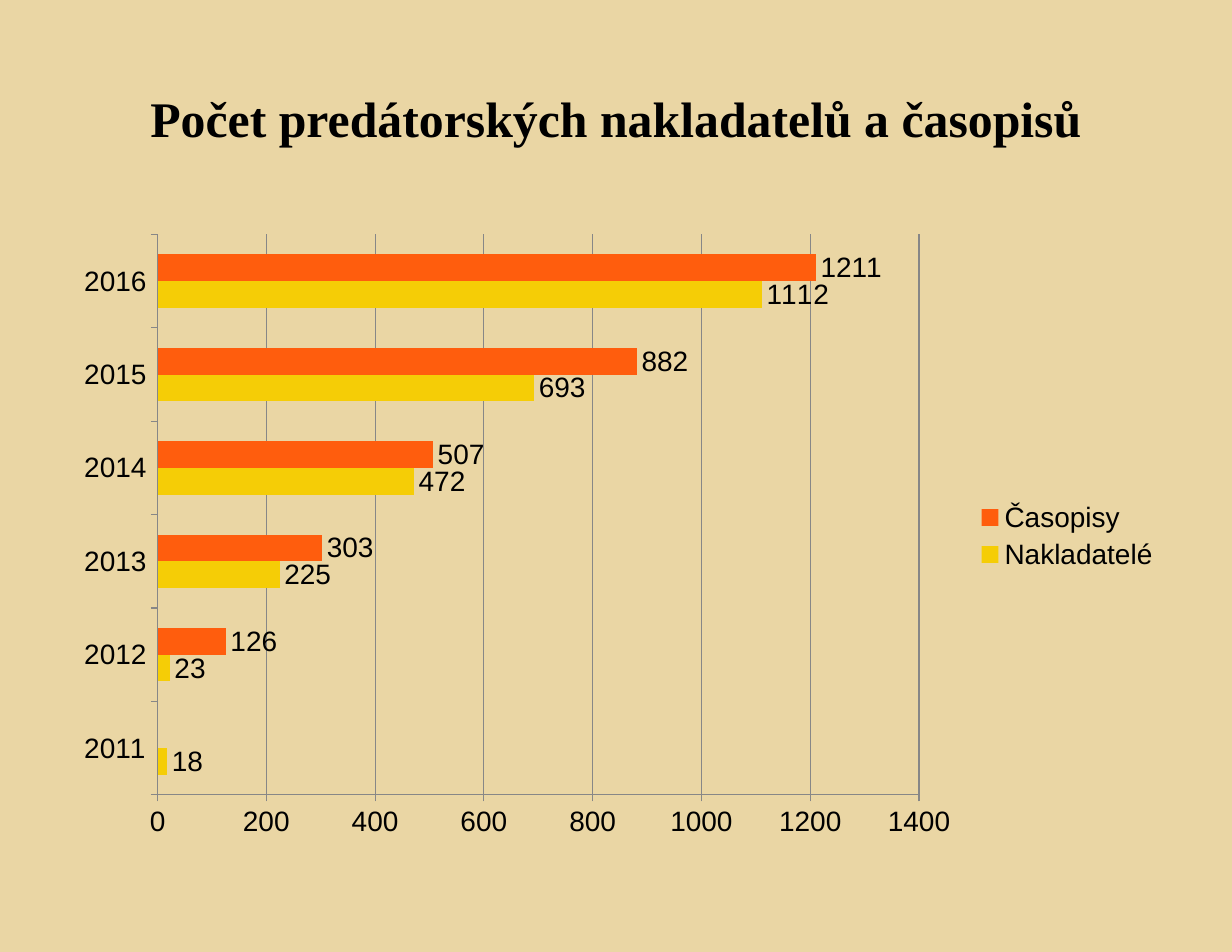
from pptx import Presentation, util as u
from pptx.chart import data
from pptx.dml import color
from pptx.enum import chart as kinds, text

PX = u.Inches(1) // 112
COLORS = {
    "background": "EAD6A4",
    "text": "000000",
    "grid": "878787",
    "publishers": "F5CD06",
    "journals": "FF5D0D",
}
YEARS = ["2011", "2012", "2013", "2014", "2015", "2016"]
SERIES = [
    ("Nakladatelé", "publishers", [18, 23, 225, 472, 693, 1112]),
    ("Časopisy", "journals", [None, 126, 303, 507, 882, 1211]),
]


def rgb(name):
    return color.RGBColor.from_string(COLORS[name])


def style_font(font, name, size, bold=False):
    font.name = name
    font.size = u.Pt(size)
    font.bold = bold
    font.color.rgb = rgb("text")


def style_line(line):
    line.color.rgb = rgb("grid")
    line.width = u.Pt(0.75)


def add_title(slide, box):
    title = slide.shapes.title
    title.left, title.top, title.width, title.height = [side * PX for side in box]
    frame = title.text_frame
    frame.text = "Počet predátorských nakladatelů a časopisů"
    frame.word_wrap = True
    frame.vertical_anchor = text.MSO_ANCHOR.MIDDLE
    para = frame.paragraphs[0]
    para.alignment = text.PP_ALIGN.CENTER
    style_font(para.font, "Times New Roman", 32, True)


def add_bars(slide, box):
    chart_data = data.CategoryChartData()
    chart_data.categories = YEARS
    for name, _, values in SERIES:
        chart_data.add_series(name, values)
    chart = slide.shapes.add_chart(
        kinds.XL_CHART_TYPE.BAR_CLUSTERED, *[side * PX for side in box], chart_data
    ).chart
    chart.has_title = False
    style_font(chart.font, "Arial", 18)
    chart.has_legend = True
    chart.legend.position = kinds.XL_LEGEND_POSITION.RIGHT
    chart.legend.include_in_layout = False

    for axis in (chart.category_axis, chart.value_axis):
        axis.major_tick_mark = kinds.XL_TICK_MARK.OUTSIDE
        axis.minor_tick_mark = kinds.XL_TICK_MARK.NONE
        style_line(axis.format.line)
    chart.value_axis.has_major_gridlines = True
    style_line(chart.value_axis.major_gridlines.format.line)
    chart.value_axis.minimum_scale = 0
    chart.value_axis.maximum_scale = 1400
    chart.value_axis.major_unit = 200

    plot = chart.plots[0]
    plot.vary_by_categories = False
    plot.gap_width = 150
    plot.overlap = 0
    for series, (_, fill_name, _) in zip(plot.series, SERIES):
        series.format.fill.solid()
        series.format.fill.fore_color.rgb = rgb(fill_name)
        labels = series.data_labels
        labels.show_value = True
        labels.position = kinds.XL_LABEL_POSITION.OUTSIDE_END


def main():
    deck = Presentation()
    deck.slide_width = 1232 * PX
    deck.slide_height = 952 * PX
    slide = deck.slides.add_slide(deck.slide_layouts[5])
    slide.background.fill.solid()
    slide.background.fill.fore_color.rgb = rgb("background")
    add_title(slide, (62, 38, 1109, 159))
    add_bars(slide, (62, 222, 1109, 628))
    deck.save("out.pptx")


if __name__ == "__main__":
    main()
